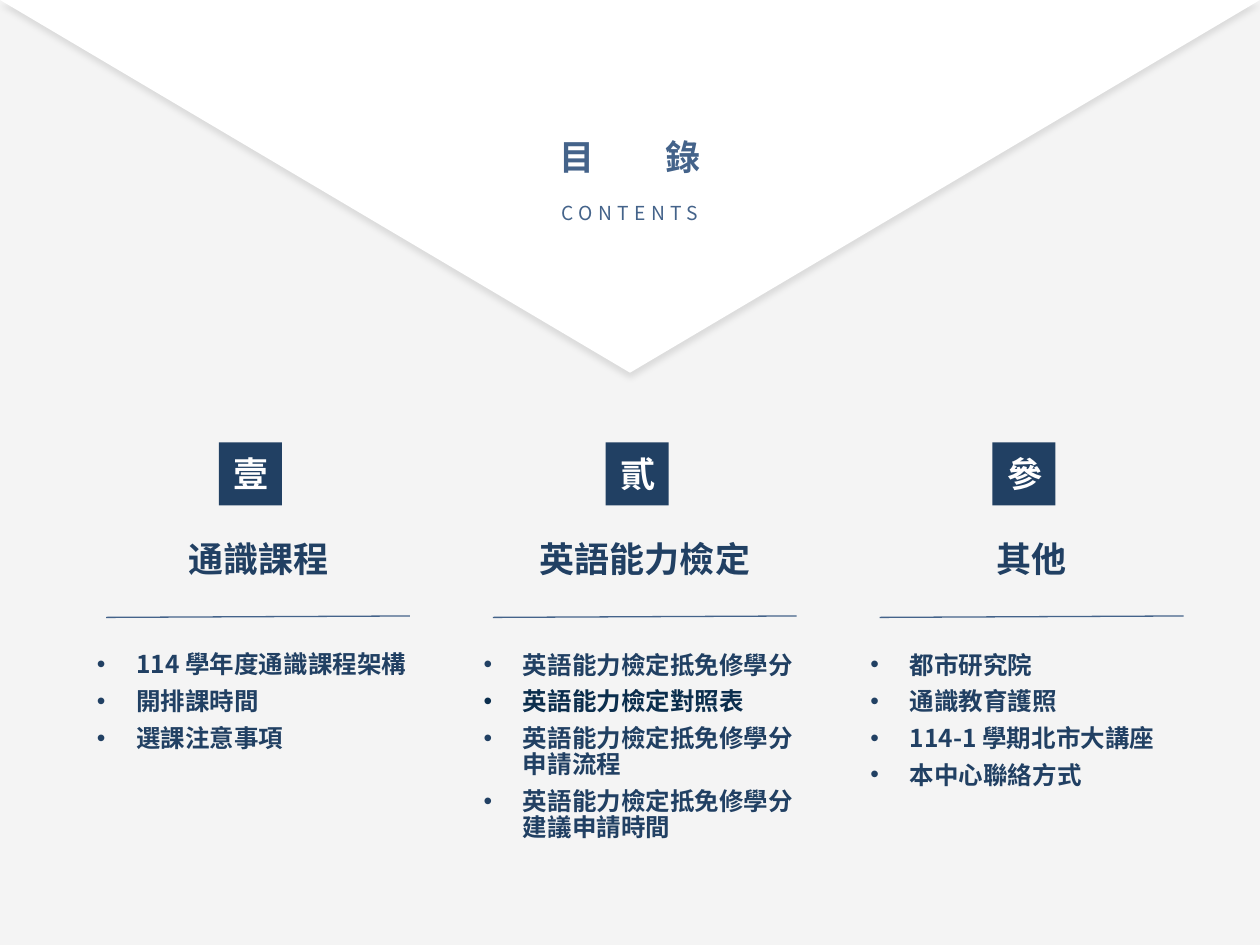
import pptx
import pptx.dml.color
import pptx.enum.shapes
import pptx.enum.text
import pptx.oxml
import pptx.oxml.ns
import pptx.util

Pt = pptx.util.Pt
SHAPES = pptx.enum.shapes.MSO_SHAPE
ALIGN = pptx.enum.text.PP_ALIGN
ANCHOR = pptx.enum.text.MSO_ANCHOR
AUTO_SIZE = pptx.enum.text.MSO_AUTO_SIZE

FONT = "Noto Sans CJK SC"
COLOURS = {
    "backdrop": "F4F4F4",
    "white": "FFFFFF",
    "navy": "214063",
    "steel": "44638A",
    "ink": "0B2E4D",
}
PAGE_WIDTH, PAGE_HEIGHT = 720, 540
FLAP_HEIGHT = 213
COLUMN_LEFT, COLUMN_PITCH = 48.3, 221
HIGHLIGHT = "英語能力檢定對照表"
SECTIONS = [
    ("壹", "通識課程", ["114 學年度通識課程架構", "開排課時間", "選課注意事項"]),
    ("貳", "英語能力檢定", [
        "英語能力檢定抵免修學分",
        HIGHLIGHT,
        "英語能力檢定抵免修學分申請流程",
        "英語能力檢定抵免修學分建議申請時間",
    ]),
    ("參", "其他", ["都市研究院", "通識教育護照", "114-1 學期北市大講座", "本中心聯絡方式"]),
]


def rgb(name):
    return pptx.dml.color.RGBColor.from_string(COLOURS[name])


def xml(text):
    namespace = pptx.oxml.ns.nsdecls("a")
    return pptx.oxml.parse_xml(text.replace("/>", f" {namespace}/>", 1)
                               if text.count("<") == 1
                               else text.replace(">", f" {namespace}>", 1))


def style_span(span, size, colour, bold=True, spacing=0):
    span.font.size = Pt(size)
    span.font.bold = bold
    span.font.name = FONT
    span.font.color.rgb = rgb(colour)
    properties = span.font._element if hasattr(span.font, "_element") else span._r.get_or_add_rPr()
    properties.append(xml(f'<a:ea typeface="{FONT}"/>'))
    if spacing:
        properties.set("spc", str(spacing * 100))


def add_block(shapes, kind, left, top, width, height, colour):
    block = shapes.add_shape(kind, Pt(left), Pt(top), Pt(width), Pt(height))
    block.shadow.inherit = False
    block.fill.solid()
    block.fill.fore_color.rgb = rgb(colour)
    block.line.fill.background()
    return block


def add_label(shapes, left, top, width, height, text, colour, wrap=True):
    box = shapes.add_textbox(Pt(left), Pt(top), Pt(width), Pt(height))
    frame = box.text_frame
    frame.word_wrap = wrap
    frame.auto_size = AUTO_SIZE.SHAPE_TO_FIT_TEXT
    frame.text = text
    frame.paragraphs[0].alignment = ALIGN.CENTER
    style_span(frame.paragraphs[0].runs[0], 20, colour)
    return frame


def add_flap(page):
    # A pentagon turned to point down; its tip takes up the whole length
    flap = add_block(page.shapes, SHAPES.PENTAGON,
                     (PAGE_WIDTH - FLAP_HEIGHT) / 2, (FLAP_HEIGHT - PAGE_WIDTH) / 2,
                     FLAP_HEIGHT, PAGE_WIDTH, "white")
    flap.adjustments[0] = 1
    flap.rotation = 90
    effects = flap._element.spPr.find(pptx.oxml.ns.qn("a:effectLst"))
    effects.append(xml(
        f'<a:outerShdw blurRad="{Pt(4)}" dist="{Pt(3)}" dir="5400000" rotWithShape="0">'
        '<a:srgbClr val="000000"><a:alpha val="9000"/></a:srgbClr></a:outerShdw>'))


def add_title(page):
    title = page.shapes.title
    title.left, title.top, title.width, title.height = Pt(301.5), Pt(74), Pt(117), Pt(54)
    frame = title.text_frame
    frame.word_wrap = True
    frame.vertical_anchor = ANCHOR.TOP
    frame.auto_size = AUTO_SIZE.SHAPE_TO_FIT_TEXT
    heading = frame.paragraphs[0]
    # The wide gap is letter spacing on the single space
    for text, spacing in (("目", 0), (" ", 36), ("錄", 0)):
        span = heading.add_run()
        span.text = text
        style_span(span, 20, "steel", spacing=spacing)
    subtitle = frame.add_paragraph()
    subtitle.text = "CONTENTS"
    subtitle.line_spacing = 2.0
    style_span(subtitle.runs[0], 11, "steel", bold=False, spacing=3)
    for para in frame.paragraphs:
        para.alignment = ALIGN.CENTER
    # Bring the title in front of the flap
    title._element.getparent().append(title._element)


def add_heading(page, left, numeral, name):
    group = page.shapes.add_group_shape()
    frame = add_label(group.shapes, left + 25.8, 303, 147, 32, name, "navy")
    frame.vertical_anchor = ANCHOR.MIDDLE
    frame.margin_left = frame.margin_right = Pt(3.6)
    add_block(group.shapes, SHAPES.RECTANGLE, left + 76.8, 252.8, 36, 36, "navy")
    add_label(group.shapes, left + 78, 255, 34.6, 32, numeral, "white", wrap=False)


def add_rule(page, left):
    rule = page.shapes.add_connector(pptx.enum.shapes.MSO_CONNECTOR.STRAIGHT,
                                     Pt(left + 186), Pt(352), Pt(left + 12.4), Pt(352.8))
    rule.line.color.rgb = rgb("steel")
    rule.line.width = Pt(0.75)
    rule._element.spPr.append(xml("<a:effectLst/>"))


def add_bullets(page, left, items):
    box = page.shapes.add_textbox(Pt(left), Pt(369.4), Pt(198.7), Pt(20 + 21 * len(items)))
    frame = box.text_frame
    frame.word_wrap = True
    frame.auto_size = AUTO_SIZE.SHAPE_TO_FIT_TEXT
    frame.text = "\n".join(items)
    for para in frame.paragraphs:
        para.line_spacing = Pt(15)
        para.space_after = Pt(6)
        properties = para._p.get_or_add_pPr()
        properties.set("marL", str(Pt(22.5)))
        properties.set("indent", str(-Pt(22.5)))
        properties.append(xml('<a:buFont typeface="Arial"/>'))
        properties.append(xml('<a:buChar char="•"/>'))
        style_span(para.runs[0], 14, "ink" if para.text == HIGHLIGHT else "navy")


def main():
    deck = pptx.Presentation()
    deck.slide_width, deck.slide_height = Pt(PAGE_WIDTH), Pt(PAGE_HEIGHT)
    page = deck.slides.add_slide(deck.slide_layouts[5])

    # Backdrop, envelope flap and title
    add_block(page.shapes, SHAPES.RECTANGLE, 0, 0, PAGE_WIDTH, PAGE_HEIGHT, "backdrop")
    add_flap(page)
    add_title(page)

    # One column per section
    for index, (numeral, name, items) in enumerate(SECTIONS):
        left = COLUMN_LEFT + index * COLUMN_PITCH
        add_heading(page, left, numeral, name)
        add_bullets(page, left, items)
        add_rule(page, left)

    deck.save("out.pptx")


if __name__ == "__main__":
    main()
